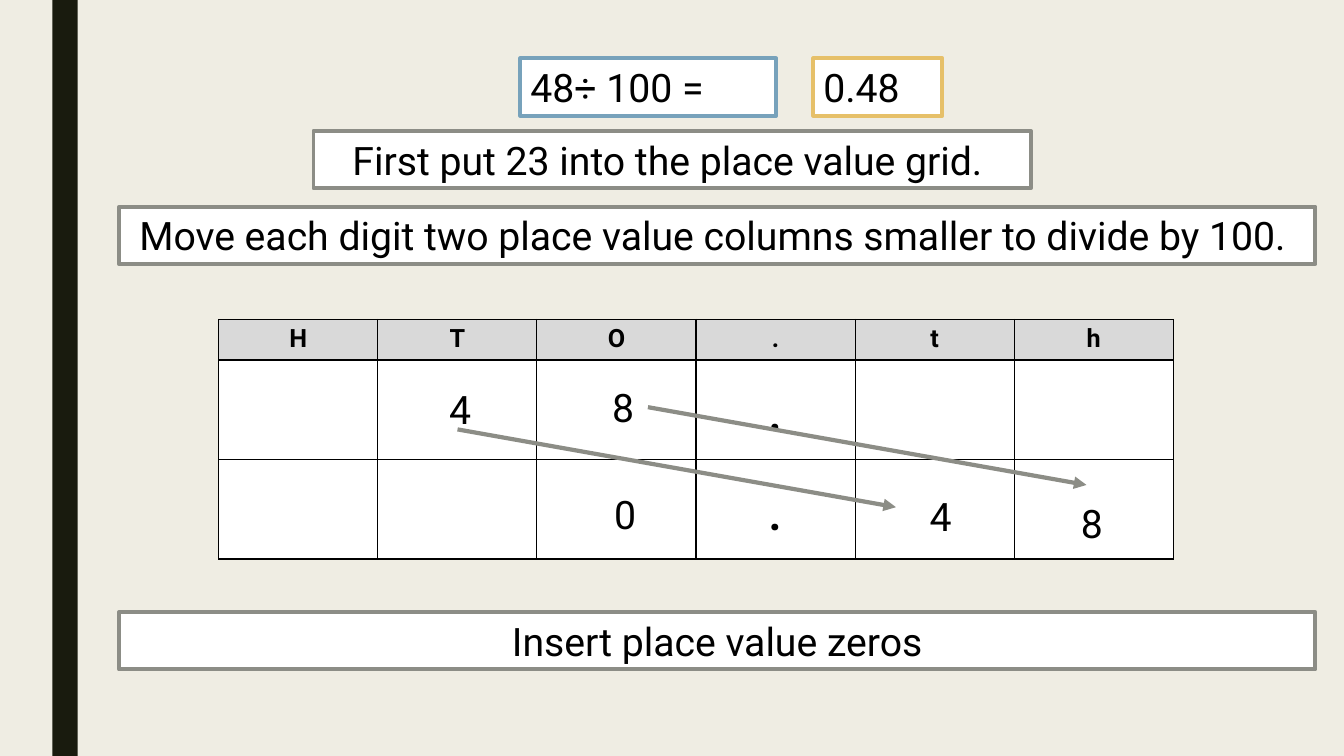
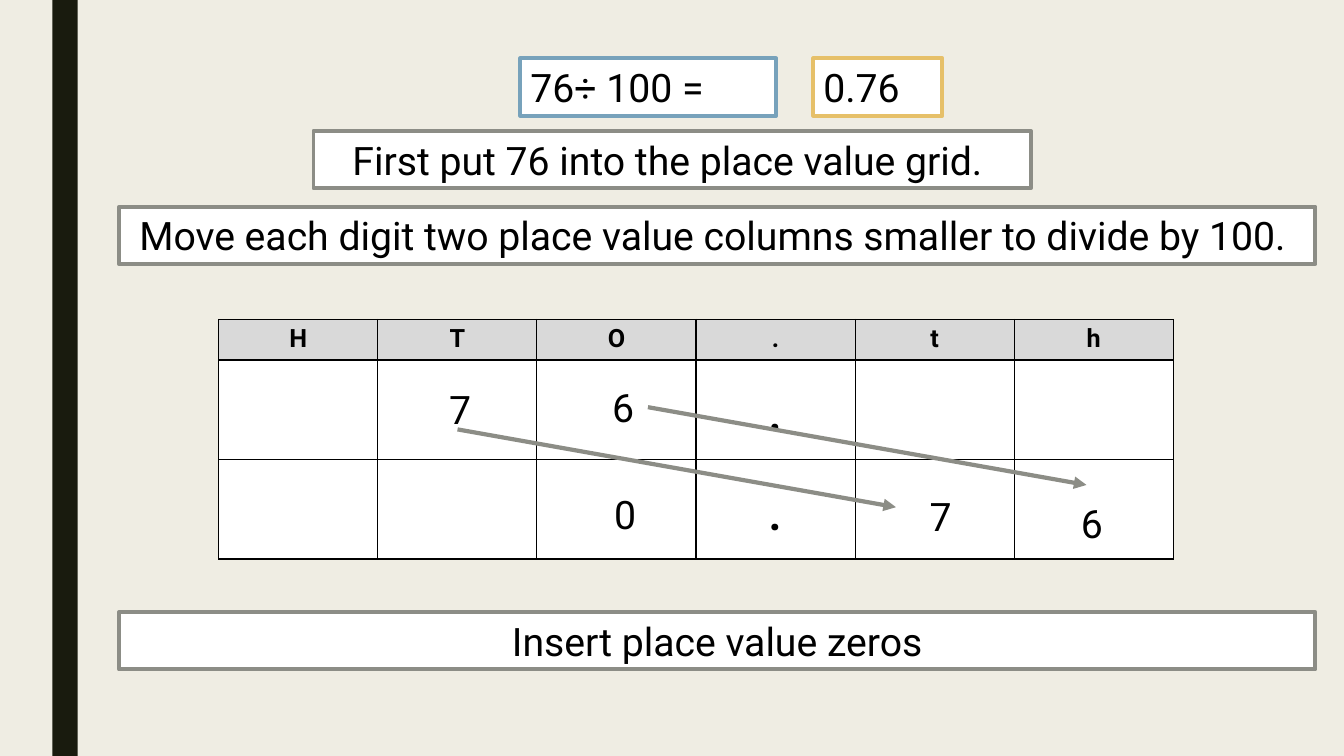
import dataclasses
import pptx
import pptx.util
import pptx.dml.color
import pptx.enum.shapes
import pptx.enum.text
import pptx.oxml
import pptx.oxml.ns
import lxml.etree

Cm, Pt = pptx.util.Cm, pptx.util.Pt
CENTER = pptx.enum.text.PP_ALIGN.CENTER
LEFT = pptx.enum.text.PP_ALIGN.LEFT


@dataclasses.dataclass(frozen=True)
class Theme:
    font: str = "Roboto"
    ground: str = "EFEDE3"
    band: str = "191B0E"
    ink: str = "000000"
    paper: str = "FFFFFF"
    head: str = "D9D9D9"
    blue: str = "77A2BB"
    gold: str = "E6C069"
    gray: str = "8C8D86"
    text: int = 28
    label: int = 18
    point: int = 44
    frame: float = 2.75
    arrow: float = 3
    grid: float = 1


THEME = Theme()

SUMS = [
    {"tens": "4", "ones": "8", "start": "23"},
    {"tens": "7", "ones": "6", "start": "76"},
]
MOVE = "Move each digit two place value columns smaller to divide by 100. "
ZEROS = "Insert place value zeros"
HEADS = ["H", "T", "O", ".", "t", "h"]

WIDE, TALL = 33.87, 19.05
LINE = 1.45
TOP = 1.47
EDGE, SPAN = 3, 30.15
DIGIT = 3.07
GRID = (5.51, 8.05)
COLUMN = 4.01
ROWS = [1.02, 2.51, 2.51]
POINT = HEADS.index(".")
SHIFT = (11.05, 1.96)
STARTS = [(16.33, 10.26), (11.53, 10.82)]


def color(code):
    return pptx.dml.color.RGBColor.from_string(code)


def paint(fill, code):
    fill.solid()
    fill.fore_color.rgb = color(code)


def style(para, size=THEME.text, bold=False, align=CENTER):
    para.alignment = align
    font = para.font
    font.name, font.size, font.bold = THEME.font, Pt(size), bold
    font.color.rgb = color(THEME.ink)


def write(shape, text, align=CENTER):
    frame = shape.text_frame
    frame.text = text
    frame.word_wrap = True
    frame.auto_size = pptx.enum.text.MSO_AUTO_SIZE.NONE
    frame.vertical_anchor = pptx.enum.text.MSO_ANCHOR.TOP
    style(frame.paragraphs[0], align=align)


def edge(shape, code):
    paint(shape.fill, THEME.paper)
    shape.line.color.rgb = color(code)
    shape.line.width = Pt(THEME.frame)


def label(slide, text, left, top, width, align=CENTER):
    box = slide.shapes.add_textbox(Cm(left), Cm(top), Cm(width), Cm(LINE))
    write(box, text, align)
    return box


def add_title(slide, text):
    title = slide.shapes.title
    title.left, title.top = Cm(13.11), Cm(TOP)
    title.width, title.height = Cm(6.45), Cm(LINE)
    write(title, text, LEFT)
    edge(title, THEME.blue)


def border(cell):
    props = cell._tc.get_or_add_tcPr()
    for spot, side in enumerate(["lnL", "lnR", "lnT", "lnB"]):
        props.insert(spot, pptx.oxml.parse_xml(
            f'<a:{side} {pptx.oxml.ns.nsdecls("a")} w="{Pt(THEME.grid)}">'
            f'<a:solidFill><a:srgbClr val="{THEME.ink}"/></a:solidFill>'
            f'</a:{side}>'))


def add_grid(slide):
    left, top = GRID
    table = slide.shapes.add_table(
        len(ROWS), len(HEADS), Cm(left), Cm(top),
        Cm(COLUMN * len(HEADS)), Cm(sum(ROWS))).table
    table.first_row = table.horz_banding = False
    for column in table.columns:
        column.width = Cm(COLUMN)
    for y, height in enumerate(ROWS):
        table.rows[y].height = Cm(height)
        for x, name in enumerate(HEADS):
            cell = table.cell(y, x)
            paint(cell.fill, THEME.paper if y else THEME.head)
            border(cell)
            if y == 0 or x == POINT:
                cell.text = name
                style(cell.text_frame.paragraphs[0],
                      THEME.point if y else THEME.label, bold=y == 0)
            if y and x == POINT:
                cell.vertical_anchor = pptx.enum.text.MSO_ANCHOR.MIDDLE


def add_arrow(slide, x, y):
    arrow = slide.shapes.add_connector(
        pptx.enum.shapes.MSO_CONNECTOR.STRAIGHT,
        Cm(x), Cm(y), Cm(x + SHIFT[0]), Cm(y + SHIFT[1]))
    arrow.line.color.rgb = color(THEME.gray)
    arrow.line.width = Pt(THEME.arrow)
    props = arrow._element.spPr
    name = pptx.oxml.ns.qn
    line = props.find(name("a:ln"))
    lxml.etree.SubElement(line, name("a:tailEnd"), type="triangle")
    lxml.etree.SubElement(props, name("a:effectLst"))


def set_master(deck, slide):
    master = deck.slide_master
    paint(master.background.fill, THEME.ground)
    band = slide.shapes.add_shape(
        pptx.enum.shapes.MSO_SHAPE.RECTANGLE, Cm(1.32), 0, Cm(0.64), Cm(TALL))
    band.shadow.inherit = False
    paint(band.fill, THEME.band)
    band.line.fill.background()
    master.shapes.element.insert(2, band._element)


def fill_slide(slide, tens, ones, start):
    add_title(slide, f"{tens}{ones}÷ 100 =")
    answer = label(slide, f"0.{tens}{ones}", 20.5, TOP, 3.25, LEFT)
    edge(answer, THEME.gold)
    steps = [
        (f"First put {start} into the place value grid. ", 7.9, 3.3, 18.08),
        (MOVE, EDGE, 5.21, SPAN),
        (ZEROS, EDGE, 15.42, SPAN),
    ]
    for step in steps:
        edge(label(slide, *step), THEME.gray)
    add_grid(slide)
    digits = [
        (tens, 10.06, 9.58), (ones, 14.17, 9.53),
        ("0", 14.22, 12.22), (tens, 22.17, 12.29), (ones, 25.98, 12.45),
    ]
    for digit in digits:
        label(slide, *digit, DIGIT)
    for spot in STARTS:
        add_arrow(slide, *spot)


def main():
    deck = pptx.Presentation()
    deck.slide_width, deck.slide_height = Cm(WIDE), Cm(TALL)
    layout = deck.slide_layouts.get_by_name("Title Only")
    slides = [deck.slides.add_slide(layout) for _ in SUMS]
    set_master(deck, slides[0])
    for slide, values in zip(slides, SUMS):
        fill_slide(slide, **values)
    deck.save("out.pptx")


if __name__ == "__main__":
    main()
